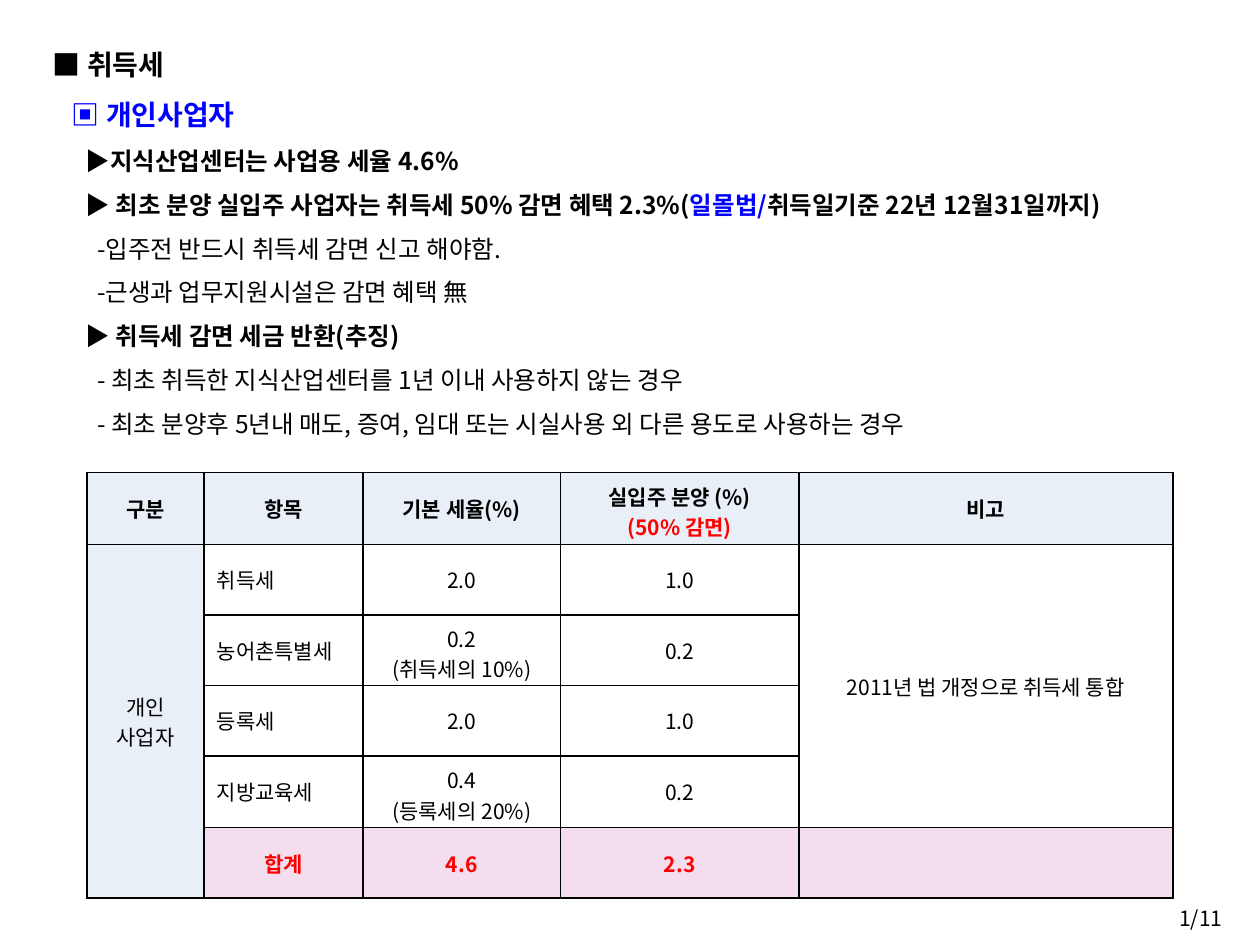
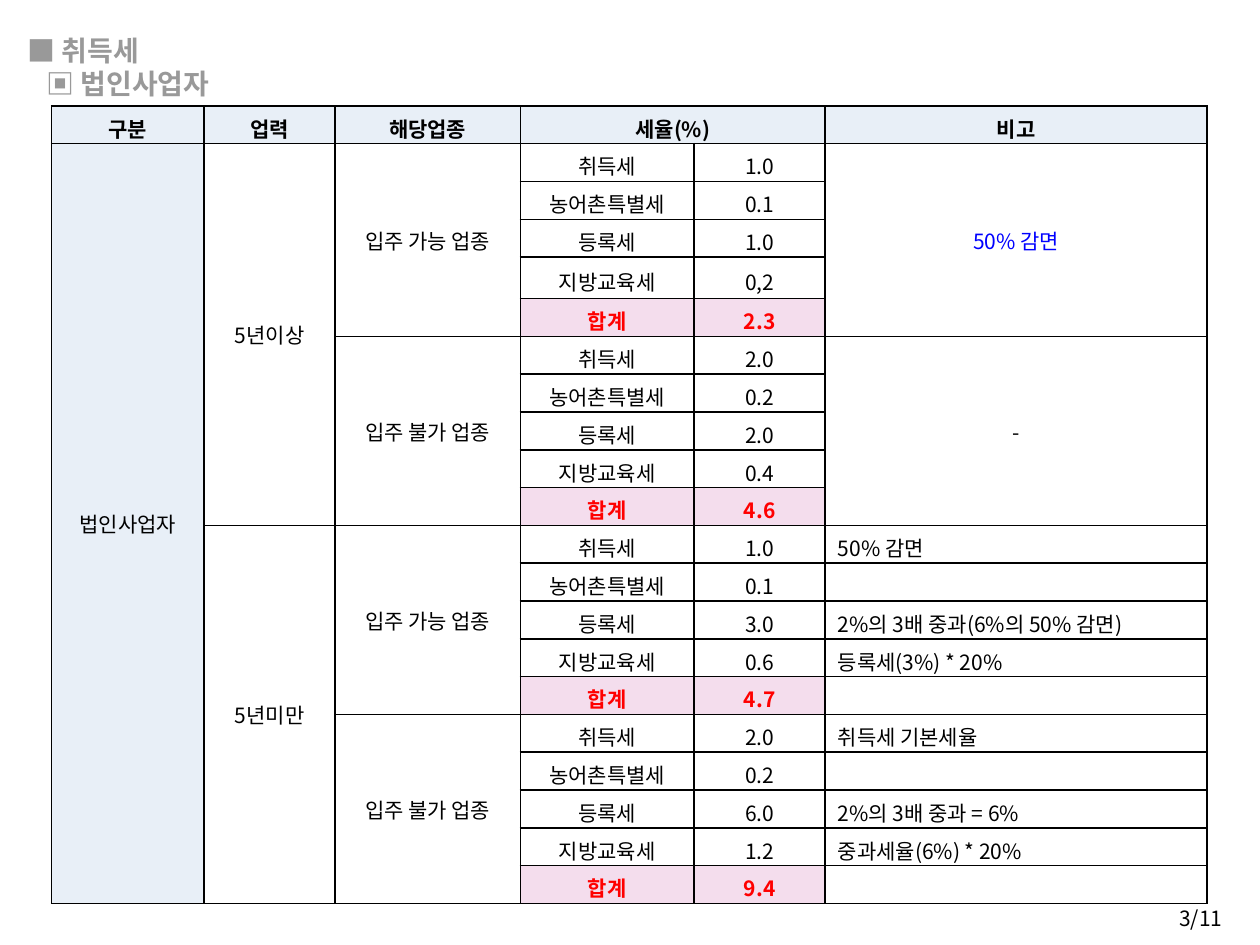
"""Build two slides on acquisition tax rates for sole traders and companies."""
from lxml import etree
from pptx import Presentation
from pptx.dml.color import RGBColor
from pptx.enum.text import MSO_ANCHOR, MSO_AUTO_SIZE, PP_ALIGN
from pptx.oxml.ns import qn
from pptx.util import Inches, Pt

BLACK = RGBColor(0x00, 0x00, 0x00)
BLUE = RGBColor(0x00, 0x00, 0xFF)
RED = RGBColor(0xFF, 0x00, 0x00)
GREY = RGBColor(0x99, 0x99, 0x99)
PALE = RGBColor(0xE8, 0xEF, 0xF7)
PINK = RGBColor(0xF4, 0xDD, 0xED)
FONT = "Noto Sans CJK KR"
LEFT, MID, RIGHT = PP_ALIGN.LEFT, PP_ALIGN.CENTER, PP_ALIGN.RIGHT
TOP, CENTRE = MSO_ANCHOR.TOP, MSO_ANCHOR.MIDDLE
FIXED = MSO_AUTO_SIZE.NONE
TOTAL = "합계"

deck = Presentation()
deck.slide_width, deck.slide_height = Inches(10), Inches(7.5)
COL, ROW = deck.slide_width // 100, deck.slide_height // 75


def write(para, text, size=12, bold=False, color=BLACK, align=LEFT, indent=0, pitch=None):
    """Add a run of text to a paragraph in the given format."""
    props = para._p.get_or_add_pPr()
    props.set("marL", str(int(indent * COL)))
    props.set("indent", "0")
    para.alignment = align
    if pitch:
        para.line_spacing = Pt(pitch)
    run = para.add_run()
    run.text = text
    run.font.size, run.font.bold = Pt(size), bold
    run.font.color.rgb = color
    run.font.name = FONT
    etree.SubElement(run._r.rPr, qn("a:ea")).set("typeface", FONT)


def tabulate(slide, left, top, wides, highs, data, spans, sums, flush, tints):
    """Draw a ruled table with merged cells and tinted total rows."""
    frame = slide.shapes.add_table(len(highs), len(wides), int(left * COL), int(top * ROW),
                                   int(sum(wides) * COL), int(sum(highs) * ROW))
    table = frame.table
    table.first_row = table.horz_banding = False
    for col, wide in zip(table.columns, wides):
        col.width = int(wide * COL)
    for row, high in zip(table.rows, highs):
        row.height = int(high * ROW)
    for y, x, down, along in spans:
        table.cell(y, x).merge(table.cell(y + down - 1, x + along - 1))
    tall = {(y, x) for y, x, down, along in spans if down > 1}
    for y, line in enumerate(data):
        for x, text in enumerate(line):
            cell = table.cell(y, x)
            total = TOTAL in line and x in sums
            if y == 0 or x == 0 or total:
                cell.fill.solid()
                cell.fill.fore_color.rgb = PINK if total else PALE
            else:
                cell.fill.background()
            for at, side in enumerate(("a:lnL", "a:lnR", "a:lnT", "a:lnB")):
                edge = etree.Element(qn(side), w=str(Pt(1)))
                paint = etree.SubElement(edge, qn("a:solidFill"))
                etree.SubElement(paint, qn("a:srgbClr"), val=str(BLACK))
                cell._tc.tcPr.insert(at, edge)
            cell.vertical_anchor = CENTRE
            parts = text.split("\n")
            if (y, x) not in tall and len(parts) * 2.4 + 1 > highs[y]:
                cell.margin_bottom = 0
            for at, part in enumerate(parts):
                body = cell.text_frame
                para = body.add_paragraph() if at else body.paragraphs[0]
                if part:
                    tint = RED if total else tints.get((y, x, at), BLACK)
                    write(para, part, bold=y == 0 or total, color=tint,
                          align=LEFT if (y, x) in flush else MID)
                else:
                    etree.SubElement(para._p, qn("a:endParaRPr"), sz="1200")


pages = []
for mark, box in (("1/11", (3.2, 2, 93.7, 33)), ("3/11", (1.2, 2.2, 18.1, 6))):
    slide = deck.slides.add_slide(deck.slide_layouts[5])
    title = slide.shapes.title
    title.left, title.width = int(box[0] * COL), int(box[2] * COL)
    title.top, title.height = int(box[1] * ROW), int(box[3] * ROW)
    title.text_frame.auto_size = FIXED
    title.text_frame.vertical_anchor = TOP
    title.text_frame.word_wrap = True
    foot = slide.shapes.add_textbox(int(92.5 * COL), int(71.4 * ROW),
                                    int(5.5 * COL), int(2.9 * ROW)).text_frame
    foot.vertical_anchor = CENTRE
    foot.word_wrap = False
    write(foot.paragraphs[0], mark, align=RIGHT)
    pages.append((slide, title.text_frame))

sole, firm = pages

HEAD = dict(size=16, bold=True, pitch=28.5)
POINT = dict(size=14, bold=True, indent=2.6, pitch=25.1)
NOTE = dict(size=14, indent=3.5, pitch=25.1)
lines = [
    ([("■ 취득세", BLACK)], HEAD),
    ([("▣ 개인사업자", BLUE)], dict(HEAD, indent=1.5)),
    ([("▶지식산업센터는 사업용 세율 4.6%", BLACK)], POINT),
    ([("▶ 최초 분양 실입주 사업자는 취득세 50% 감면 혜택 2.3%(", BLACK), ("일몰법/", BLUE),
      ("취득일기준 22년 12월31일까지)", BLACK)], POINT),
    ([("-입주전 반드시 취득세 감면 신고 해야함.", BLACK)], NOTE),
    ([("-근생과 업무지원시설은 감면 혜택 無", BLACK)], NOTE),
    ([("▶ 취득세 감면 세금 반환(추징)", BLACK)], POINT),
    ([("- 최초 취득한 지식산업센터를 1년 이내 사용하지 않는 경우", BLACK)], NOTE),
    ([("- 최초 분양후 5년내 매도, 증여, 임대 또는 시실사용 외 다른 용도로 사용하는 경우", BLACK)], NOTE),
]
for at, (runs, style) in enumerate(lines):
    para = sole[1].add_paragraph() if at else sole[1].paragraphs[0]
    for text, color in runs:
        write(para, text, color=color, **style)

data = [
    ["구분", "항목", "기본 세율(%)", "실입주 분양 (%)\n(50% 감면)", "비고"],
    ["개인\n사업자", "취득세", "2.0", "1.0", "2011년 법 개정으로 취득세 통합"],
    ["", "농어촌특별세", "0.2\n(취득세의 10%)", "0.2", ""],
    ["", "등록세", "2.0", "1.0", ""],
    ["", "지방교육세", "0.4\n(등록세의 20%)", "0.2", ""],
    ["", TOTAL, "4.6", "2.3", ""],
]
tabulate(sole[0], 6.9, 37.5, [9.3, 12.6, 15.7, 18.9, 29.7],
         [5.7, 5.6, 5.6, 5.6, 5.7, 5.6], data,
         spans=[(1, 0, 5, 1), (1, 4, 4, 1)], sums=range(1, 5),
         flush={(y, 1) for y in range(1, 5)}, tints={(0, 3, 1): RED})

write(firm[1].paragraphs[0], "■ 취득세", size=16, bold=True, color=GREY, pitch=19)
write(firm[1].add_paragraph(), "▣ 법인사업자", size=16, bold=True, color=GREY,
      indent=1.5, pitch=19)

taxes = ["취득세", "농어촌특별세", "등록세", "지방교육세", TOTAL]
groups = [
    ("5년이상", "입주 가능 업종", ["1.0", "0.1", "1.0", "0,2", "2.3"],
     ["50% 감면", "", "", "", ""]),
    ("", "입주 불가 업종", ["2.0", "0.2", "2.0", "0.4", "4.6"], ["-", "", "", "", ""]),
    ("5년미만", "입주 가능 업종", ["1.0", "0.1", "3.0", "0.6", "4.7"],
     ["50% 감면", "", "2%의 3배 중과(6%의 50% 감면)", "등록세(3%) * 20%", ""]),
    ("", "입주 불가 업종", ["2.0", "0.2", "6.0", "1.2", "9.4"],
     ["취득세 기본세율", "", "2%의 3배 중과 = 6%", "중과세율(6%) * 20%", ""]),
]
data = [["구분", "업력", "해당업종", "세율(%)", "", "비고"]]
for age, trade, rates, notes in groups:
    for at, (tax, rate, note) in enumerate(zip(taxes, rates, notes)):
        data.append(["", "" if at else age, "" if at else trade, tax, rate, note])
data[1][0] = "법인사업자"
spans = [(0, 3, 1, 2), (1, 0, 20, 1), (1, 1, 10, 1), (11, 1, 10, 1),
         (1, 5, 5, 1), (6, 5, 5, 1)]
spans += [(y, 2, 5, 1) for y in range(1, 21, 5)]
tabulate(firm[0], 4.1, 8.4, [12.1, 10.4, 14.7, 13.8, 10.4, 30.3],
         [3] * 4 + [3.3] + [3] * 16, data, spans, sums=(3, 4),
         flush={(y, 5) for y in range(11, 21)}, tints={(1, 5, 0): BLUE})

deck.save("out.pptx")
